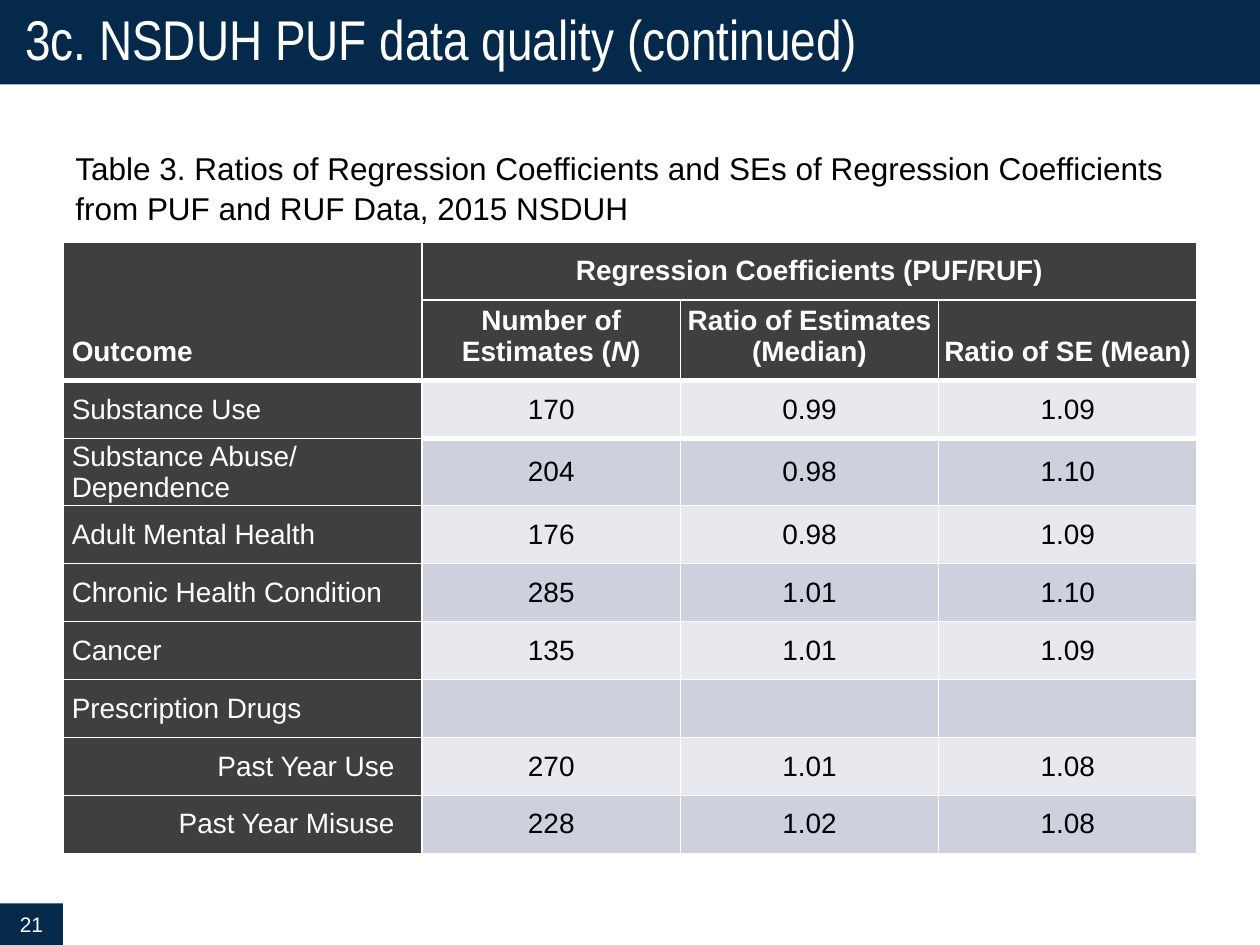
from dataclasses import dataclass
from typing import Optional

from lxml.etree import SubElement
from pptx import Presentation
from pptx.dml.color import RGBColor
from pptx.enum.shapes import MSO_SHAPE as Shape
from pptx.enum.text import MSO_ANCHOR as Anchor, PP_ALIGN as Align
from pptx.oxml.ns import qn
from pptx.util import Inches, Pt


@dataclass(frozen=True)
class Theme:
    navy: str = "04294A"
    charcoal: str = "3F3F3F"
    bands: tuple = ("E7E9EF", "CCD1DD")
    white: str = "FFFFFF"
    black: str = "000000"
    body_font: str = "Arial"
    title_font: str = "Arial Narrow"
    title_size: int = 32
    caption_size: int = 18
    table_size: int = 16
    number_size: int = 12
    thin: int = 1
    thick: int = 3


@dataclass(frozen=True)
class Span:
    text: str
    italic: bool = False


@dataclass(frozen=True)
class Outcome:
    name: str
    values: tuple = ("", "", "")
    nested: bool = False


@dataclass(frozen=True)
class CellStyle:
    """Margins are left, top, right, bottom in inches; edges are in points."""
    fill: str
    color: str
    align: Align = Align.LEFT
    anchor: Anchor = Anchor.MIDDLE
    margins: tuple = (0.07, 0, 0.07, 0)
    bold: bool = False
    top: int = 1
    bottom: int = 1


THEME = Theme()
COLUMN_WIDTHS = (2.85, 2.05, 2.05, 2.05)
ROW_HEIGHT, HEADING_HEIGHT, WRAPPED_HEIGHT = 0.46, 0.64, 0.52
HEADINGS = (
    (Span("Number of Estimates ("), Span("N", italic=True), Span(")")),
    (Span("Ratio of Estimates (Median)"),),
    (Span("Ratio of SE (Mean)"),),
)
OUTCOMES = (
    Outcome("Substance Use", ("170", "0.99", "1.09")),
    Outcome("Substance Abuse/ Dependence", ("204", "0.98", "1.10")),
    Outcome("Adult Mental Health", ("176", "0.98", "1.09")),
    Outcome("Chronic Health Condition", ("285", "1.01", "1.10")),
    Outcome("Cancer", ("135", "1.01", "1.09")),
    Outcome("Prescription Drugs"),
    Outcome("Past Year Use", ("270", "1.01", "1.08"), nested=True),
    Outcome("Past Year Misuse", ("228", "1.02", "1.08"), nested=True),
)


def add_span(para, span: Span, size: int, color: str,
             font: str = THEME.body_font, bold: bool = False) -> None:
    run = para.add_run()
    run.text = span.text
    run.font.name, run.font.size = font, Pt(size)
    run.font.bold, run.font.italic = bold, span.italic
    run.font.color.rgb = RGBColor.from_string(color)


def add_bar(page, left: float, top: float, width: float, height: float):
    """Add a plain navy rectangle and return its text frame."""
    bar = page.shapes.add_shape(Shape.RECTANGLE, Inches(left), Inches(top),
                                Inches(width), Inches(height))
    bar.shadow.inherit = False
    bar.fill.solid()
    bar.fill.fore_color.rgb = RGBColor.from_string(THEME.navy)
    bar.line.fill.background()
    frame = bar.text_frame
    frame.word_wrap = True
    frame.vertical_anchor = Anchor.MIDDLE
    return frame


def add_title(page, text: str) -> None:
    frame = add_bar(page, 0, 0, 10, 0.67)
    frame.margin_left = frame.margin_right = Inches(0.2)
    frame.margin_top = frame.margin_bottom = Inches(0.1)
    para = frame.paragraphs[0]
    para.alignment, para.line_spacing = Align.LEFT, 0.9
    add_span(para, Span(text), THEME.title_size, THEME.white, THEME.title_font)


def add_page_number(page, text: str) -> None:
    para = add_bar(page, 0, 7.17, 0.5, 0.33).paragraphs[0]
    para.alignment = Align.CENTER
    add_span(para, Span(text), THEME.number_size, THEME.white)


def add_caption(page, text: str) -> None:
    box = page.shapes.add_textbox(Inches(0.5), Inches(1.12), Inches(8.96), Inches(0.72))
    box.text_frame.word_wrap = True
    para = box.text_frame.paragraphs[0]
    para.line_spacing = 1.05
    add_span(para, Span(text), THEME.caption_size, THEME.black)


def set_borders(cell, top: int, bottom: int) -> None:
    """Draw white edges; call before the fill, which must follow them in the XML."""
    properties = cell._tc.get_or_add_tcPr()
    edges = {"a:lnL": THEME.thin, "a:lnR": THEME.thin, "a:lnT": top, "a:lnB": bottom}
    for tag, points in edges.items():
        line = SubElement(properties, qn(tag), w=str(Pt(points)))
        SubElement(SubElement(line, qn("a:solidFill")), qn("a:srgbClr"), val=THEME.white)


def fill_cell(cell, style: CellStyle, spans: Optional[tuple] = None) -> None:
    set_borders(cell, style.top, style.bottom)
    cell.fill.solid()
    cell.fill.fore_color.rgb = RGBColor.from_string(style.fill)
    cell.vertical_anchor = style.anchor
    (cell.margin_left, cell.margin_top,
     cell.margin_right, cell.margin_bottom) = map(Inches, style.margins)
    para = cell.text_frame.paragraphs[0]
    para.alignment = style.align
    for span in spans or ():
        add_span(para, span, THEME.table_size, style.color, bold=style.bold)


def fill_headings(table) -> None:
    base = dict(fill=THEME.charcoal, color=THEME.white, bold=True)
    corner = CellStyle(**base, anchor=Anchor.BOTTOM, margins=(0.07, 0, 0.07, 0.1),
                       bottom=THEME.thick)
    group = CellStyle(**base, align=Align.CENTER)
    column = CellStyle(**base, align=Align.CENTER, anchor=Anchor.BOTTOM,
                       margins=(0, 0, 0, 0.1), bottom=THEME.thick)
    table.cell(0, 0).merge(table.cell(1, 0))
    table.cell(0, 1).merge(table.cell(0, 3))
    fill_cell(table.cell(0, 0), corner, (Span("Outcome"),))
    fill_cell(table.cell(1, 0), corner)
    fill_cell(table.cell(0, 1), group, (Span("Regression Coefficients (PUF/RUF)"),))
    for index, spans in enumerate(HEADINGS, start=1):
        if index > 1:
            fill_cell(table.cell(0, index), group)
        fill_cell(table.cell(1, index), column, spans)


def fill_outcome(table, index: int, outcome: Outcome) -> None:
    row, first = index + 2, index == 0
    top = THEME.thick if first else THEME.thin
    label = CellStyle(THEME.charcoal, THEME.white, top=top,
                      align=Align.RIGHT if outcome.nested else Align.LEFT,
                      margins=(0.07, 0, 0.22 if outcome.nested else 0.07, 0))
    value = CellStyle(THEME.bands[index % 2], THEME.black, Align.CENTER,
                      top=THEME.thick if index < 2 else THEME.thin,
                      bottom=THEME.thick if first else THEME.thin)
    fill_cell(table.cell(row, 0), label, (Span(outcome.name),))
    for column, text in enumerate(outcome.values, start=1):
        fill_cell(table.cell(row, column), value, (Span(text),) if text else None)


def add_ratio_table(page) -> None:
    heights = [ROW_HEIGHT, HEADING_HEIGHT] + [ROW_HEIGHT] * len(OUTCOMES)
    heights[3] = WRAPPED_HEIGHT
    table = page.shapes.add_table(len(heights), len(COLUMN_WIDTHS), Inches(0.5), Inches(1.92),
                                  Inches(sum(COLUMN_WIDTHS)), Inches(sum(heights))).table
    for column, width in zip(table.columns, COLUMN_WIDTHS):
        column.width = Inches(width)
    for row, height in zip(table.rows, heights):
        row.height = Inches(height)
    fill_headings(table)
    for index, outcome in enumerate(OUTCOMES):
        fill_outcome(table, index, outcome)


def main() -> None:
    deck = Presentation()
    deck.slide_width, deck.slide_height = Inches(10), Inches(7.5)
    page = deck.slides.add_slide(deck.slide_layouts[6])
    add_title(page, "3c. NSDUH PUF data quality (continued)")
    add_caption(page, "Table 3. Ratios of Regression Coefficients and SEs of "
                      "Regression Coefficients from PUF and RUF Data, 2015 NSDUH")
    add_page_number(page, "21")
    add_ratio_table(page)
    deck.save("out.pptx")


if __name__ == "__main__":
    main()
